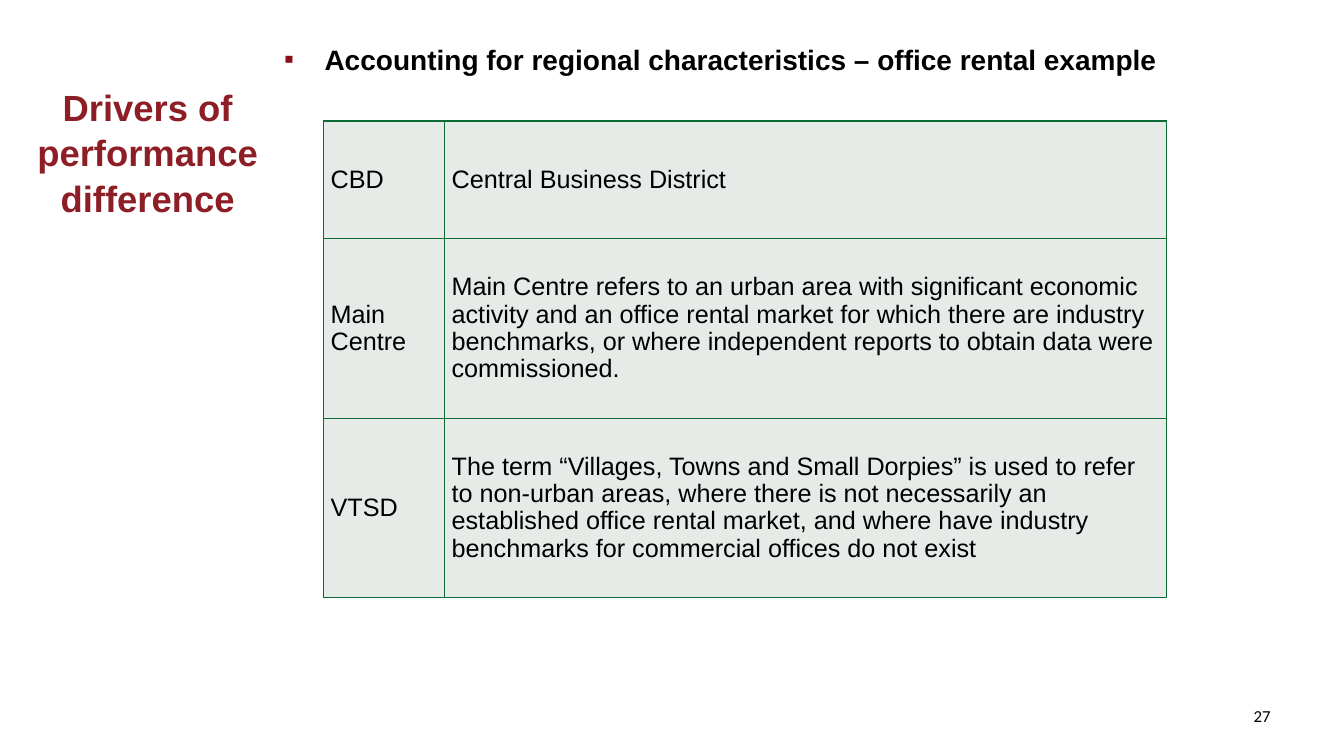
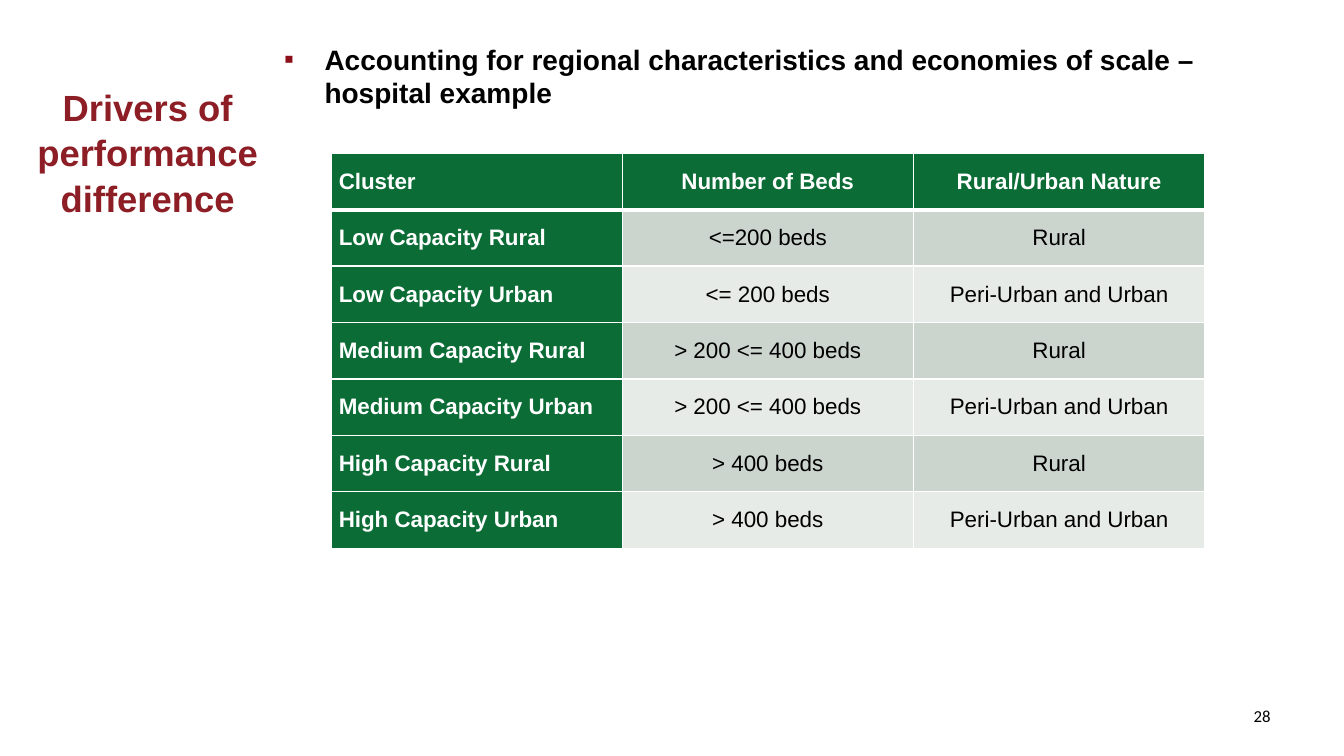
from lxml import etree
from pptx import Presentation
from pptx.dml.color import RGBColor
from pptx.enum.text import MSO_ANCHOR, PP_ALIGN
from pptx.oxml.ns import qn
from pptx.util import Emu, Pt

EMU_PER_PX = 9144
LEFT, CENTER, RIGHT = PP_ALIGN.LEFT, PP_ALIGN.CENTER, PP_ALIGN.RIGHT
MIDDLE = MSO_ANCHOR.MIDDLE

BLACK, WHITE = "000000", "FFFFFF"
CRIMSON, BULLET_RED = "8E1E25", "8B0E18"
GREEN, BAND_DARK, BAND_LIGHT = "0B6C36", "CCD4CE", "E7EBE8"

TITLE = "Drivers of performance difference"
TERMS = [
    ("CBD", "Central Business District"),
    ("Main Centre",
     "Main Centre refers to an urban area with significant economic activity and an office "
     "rental market for which there are industry benchmarks, or where independent reports "
     "to obtain data were commissioned."),
    ("VTSD",
     "The term “Villages, Towns and Small Dorpies” is used to refer to non-urban areas, "
     "where there is not necessarily an established office rental market, and where have "
     "industry benchmarks for commercial offices do not exist"),
]
CLUSTERS = [
    ("Cluster", "Number of Beds", "Rural/Urban Nature"),
    ("Low Capacity Rural", "<=200 beds", "Rural"),
    ("Low Capacity Urban", "<= 200 beds", "Peri-Urban and Urban"),
    ("Medium Capacity Rural", "> 200 <= 400 beds", "Rural"),
    ("Medium Capacity Urban", "> 200 <= 400 beds", "Peri-Urban and Urban"),
    ("High Capacity Rural", "> 400 beds", "Rural"),
    ("High Capacity Urban", "> 400 beds", "Peri-Urban and Urban"),
]


def px(n):
    return Emu(n * EMU_PER_PX)


def rgb(value):
    return RGBColor.from_string(value)


def add_bullet(p, char, color, indent):
    pPr = p._p.get_or_add_pPr()
    pPr.set("marL", str(px(indent)))
    pPr.set("indent", str(-px(indent)))
    clr = etree.SubElement(pPr, qn("a:buClr"))
    etree.SubElement(clr, qn("a:srgbClr"), val=color)
    etree.SubElement(pPr, qn("a:buFont"), typeface="Arial")
    etree.SubElement(pPr, qn("a:buChar"), char=char)


def write(tf, text, size=18, font="Arial", color=BLACK, bold=False, align=LEFT,
          after=0, spacing=None, bullet=None):
    tf.word_wrap = True
    p = tf.paragraphs[0]
    p.alignment = align
    p.space_after = Pt(after)
    if spacing:
        p.line_spacing = spacing
    if bullet:
        add_bullet(p, bullet, BULLET_RED, 40)
    r = p.add_run()
    r.text = text
    r.font.size = Pt(size)
    r.font.name = font
    r.font.bold = bold
    r.font.color.rgb = rgb(color)


def add_text(s, box, text, **fmt):
    write(s.shapes.add_textbox(*map(px, box)).text_frame, text, **fmt)


def add_borders(cell, color, top=1, bottom=1):
    tcPr = cell._tc.get_or_add_tcPr()
    for side, width in (("L", 1), ("R", 1), ("T", top), ("B", bottom)):
        ln = etree.SubElement(tcPr, qn(f"a:ln{side}"), w=str(Pt(width)))
        fill = etree.SubElement(ln, qn("a:solidFill"))
        etree.SubElement(fill, qn("a:srgbClr"), val=color)


def add_grid(s, left, top, widths, heights):
    frame = s.shapes.add_table(len(heights), len(widths), px(left), px(top),
                               px(sum(widths)), px(sum(heights)))
    table = frame.table
    for column, width in zip(table.columns, widths):
        column.width = px(width)
    for row, height in zip(table.rows, heights):
        row.height = px(height)
    return table


def fill_cell(cell, text, fill, **fmt):
    cell.margin_left = cell.margin_right = px(7)
    cell.margin_top = cell.margin_bottom = 0
    cell.vertical_anchor = MIDDLE
    cell.fill.solid()
    cell.fill.fore_color.rgb = rgb(fill)
    write(cell.text_frame, text, **fmt)


def add_terms_table(s):
    table = add_grid(s, 321, 120, [120, 716], [117, 178, 178])
    for i, row in enumerate(TERMS):
        for j, text in enumerate(row):
            cell = table.cell(i, j)
            add_borders(cell, GREEN)
            fill_cell(cell, text, BAND_LIGHT, after=12, spacing=0.97)


def add_clusters_table(s):
    table = add_grid(s, 329, 152, [288, 289, 289], [56] * len(CLUSTERS))
    for i, row in enumerate(CLUSTERS):
        for j, text in enumerate(row):
            cell = table.cell(i, j)
            heading = i == 0 or j == 0
            band = BAND_DARK if i % 2 else BAND_LIGHT
            add_borders(cell, WHITE, top=3 if i == 1 else 1, bottom=3 if i == 0 else 1)
            fill_cell(cell, text, GREEN if heading else band, size=16, bold=heading,
                      color=WHITE if heading else BLACK, align=CENTER if j else LEFT)


def add_slide(prs, number, topic):
    s = prs.slides.add_slide(prs.slide_layouts[6])
    add_text(s, (1194, 695, 76, 39), str(number), size=12, font="Calibri", align=RIGHT)
    add_text(s, (21, 77, 251, 325), TITLE, size=26, color=CRIMSON, bold=True,
             align=CENTER, spacing=1.05)
    add_text(s, (272, 37, 998, 83), topic, size=20, bold=True, after=3, bullet="▪")
    return s


def main():
    prs = Presentation()
    prs.slide_width, prs.slide_height = px(1333), px(750)
    add_terms_table(add_slide(
        prs, 27, "Accounting for regional characteristics – office rental example"))
    add_clusters_table(add_slide(
        prs, 28,
        "Accounting for regional characteristics and economies of scale – hospital example"))
    prs.save("out.pptx")


if __name__ == "__main__":
    main()
